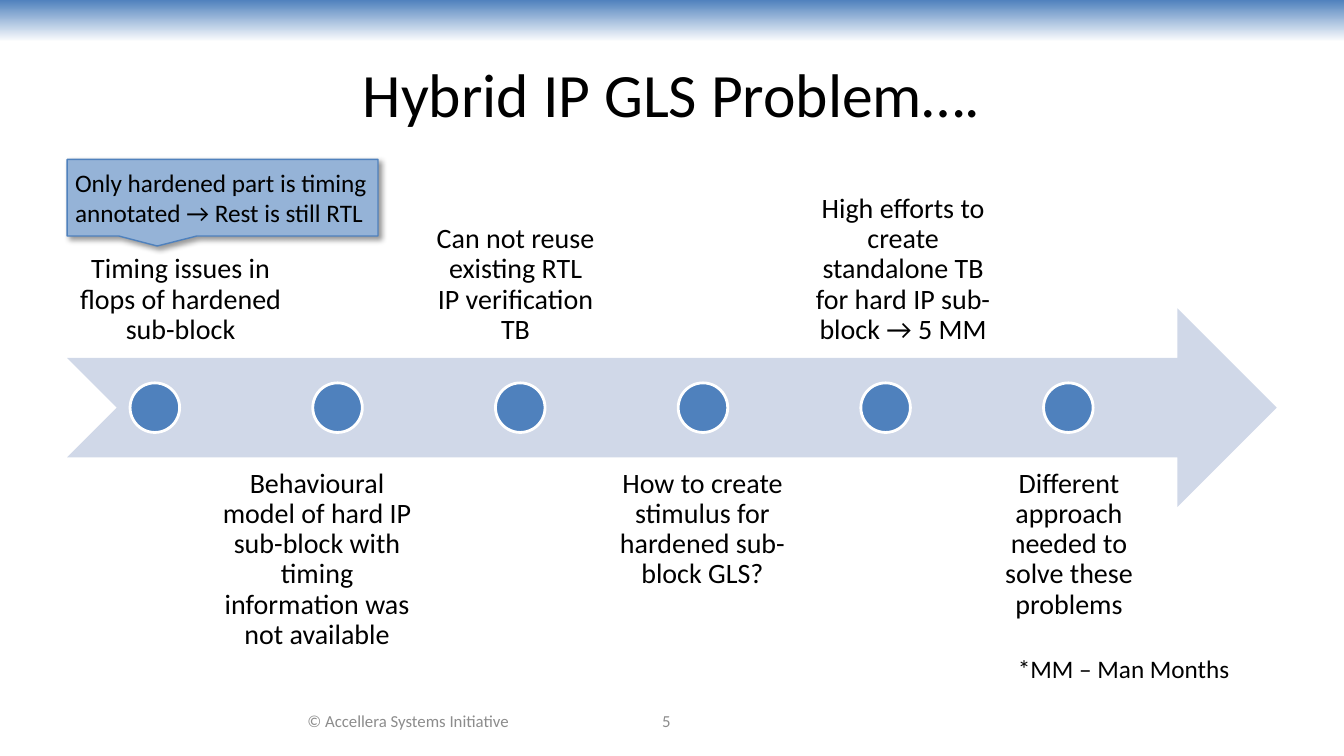
from dataclasses import dataclass

from lxml.etree import SubElement
from pptx import Presentation
from pptx.dml.color import RGBColor
from pptx.enum.shapes import MSO_SHAPE
from pptx.enum.text import MSO_ANCHOR, MSO_AUTO_SIZE, PP_ALIGN
from pptx.oxml.ns import qn
from pptx.shapes.autoshape import Shape
from pptx.slide import Slide
from pptx.util import Pt

COLORS = {
    "blue": "4F81BD",
    "white": "FFFFFF",
    "black": "000000",
    "arrow": "D0D8E8",
    "callout": "95B3D7",
    "footer": "8C8C8C",
}
FONT = "Calibri"

MARGIN = 48
ARROW_WIDTH = 864
BAND_HEIGHT = 141.8
ABOVE_TOP, ARROW_TOP, BELOW_TOP = 113.8, 220.3, 326.2
DOT_SIZE, DOT_LEFT, DOT_PITCH = 35.4, 92.9, 130.5


@dataclass
class Box:
    left: float
    top: float
    width: float
    height: float

    def lengths(self) -> tuple[Pt, Pt, Pt, Pt]:
        return Pt(self.left), Pt(self.top), Pt(self.width), Pt(self.height)


@dataclass
class Stage:
    text: str
    left: float
    width: float


# Stages alternate above and below the arrow
STAGES = [
    Stage("Timing issues in flops of hardened sub-block", 48, 162),
    Stage("Behavioural model of hard IP sub-block with timing "
          "information was not available", 149.8, 153.4),
    Stage("Can not reuse existing RTL IP verification TB", 303.1, 130.3),
    Stage("How to create stimulus for hardened sub-block GLS?", 433.4, 136.8),
    Stage("High efforts to create standalone TB for hard IP sub-block → 5 MM",
          570.2, 149.8),
    Stage("Different approach needed to solve these problems", 701.3, 124.6),
]


def rgb(name: str) -> RGBColor:
    return RGBColor.from_string(COLORS[name])


def write(shape: Shape, text: str, *, size: float, color: str = "black",
          align: PP_ALIGN = PP_ALIGN.CENTER, anchor: MSO_ANCHOR = MSO_ANCHOR.MIDDLE,
          inset: float | None = None, spacing: float | None = None,
          grow: bool = False) -> None:
    frame = shape.text_frame
    frame.word_wrap = True
    frame.auto_size = MSO_AUTO_SIZE.SHAPE_TO_FIT_TEXT if grow else MSO_AUTO_SIZE.NONE
    frame.vertical_anchor = anchor
    if inset is not None:
        frame.margin_left = frame.margin_right = Pt(inset)
        frame.margin_top = frame.margin_bottom = Pt(inset)
    paragraph = frame.paragraphs[0]
    paragraph.alignment = align
    if spacing is not None:
        paragraph.line_spacing = spacing
    run = paragraph.add_run()
    run.text = text
    run.font.name = FONT
    run.font.size = Pt(size)
    run.font.color.rgb = rgb(color)


def add_label(slide: Slide, box: Box, text: str, **style) -> None:
    write(slide.shapes.add_textbox(*box.lengths()), text, **style)


def add_figure(slide: Slide, kind: MSO_SHAPE, box: Box, fill: str,
               line: str | None = None, line_width: float = 1) -> Shape:
    figure = slide.shapes.add_shape(kind, *box.lengths())
    figure.shadow.inherit = False
    figure.fill.solid()
    figure.fill.fore_color.rgb = rgb(fill)
    if line:
        figure.line.color.rgb = rgb(line)
        figure.line.width = Pt(line_width)
    else:
        figure.line.fill.background()
    return figure


def add_banner(slide: Slide) -> None:
    banner = add_figure(slide, MSO_SHAPE.RECTANGLE, Box(0, 0, 960, 30), "blue")
    banner.fill.gradient()
    banner.fill.gradient_angle = 270
    for stop, color in zip(banner.fill.gradient_stops, ("blue", "white")):
        stop.color.rgb = rgb(color)


def cast_shadow(shape: Shape) -> None:
    effects = shape.element.spPr.find(qn("a:effectLst"))
    shadow = SubElement(effects, qn("a:outerShdw"), blurRad=str(Pt(4)),
                        dist=str(Pt(3)), dir=str(45 * 60000), rotWithShape="0")
    tint = SubElement(shadow, qn("a:srgbClr"), val=COLORS["black"])
    SubElement(tint, qn("a:alpha"), val="40000")


def add_stage(slide: Slide, index: int, stage: Stage) -> None:
    above = index % 2 == 0
    top = ABOVE_TOP if above else BELOW_TOP
    add_label(slide, Box(stage.left, top, stage.width, BAND_HEIGHT), stage.text,
              size=20, inset=8.8, spacing=0.9,
              anchor=MSO_ANCHOR.BOTTOM if above else MSO_ANCHOR.TOP)
    dot_top = ARROW_TOP + (BAND_HEIGHT - DOT_SIZE) / 2
    add_figure(slide, MSO_SHAPE.OVAL,
               Box(DOT_LEFT + index * DOT_PITCH, dot_top, DOT_SIZE, DOT_SIZE),
               "blue", line="white", line_width=2)


def main() -> None:
    deck = Presentation()
    deck.slide_width, deck.slide_height = Pt(960), Pt(540)
    slide = deck.slides.add_slide(deck.slide_layouts.get_by_name("Title Only"))

    # Banner and title
    add_banner(slide)
    title = slide.shapes.title
    title.left, title.top, title.width, title.height = Box(48, 21.6, 864, 90).lengths()
    write(title, "Hybrid IP GLS Problem….", size=44)

    # Footer and footnote
    add_label(slide, Box(175.7, 500.4, 231.8, 28.8), "© Accellera Systems Initiative",
              size=12, color="footer")
    add_label(slide, Box(383.8, 500.4, 184.3, 28.8), "5", size=12, color="footer")
    add_label(slide, Box(720, 463, 168, 28.8), "*MM – Man Months", size=18,
              align=PP_ALIGN.LEFT, anchor=MSO_ANCHOR.TOP, grow=True)

    # Timeline
    add_figure(slide, MSO_SHAPE.NOTCHED_RIGHT_ARROW,
               Box(MARGIN, ARROW_TOP, ARROW_WIDTH, BAND_HEIGHT), "arrow")
    for index, stage in enumerate(STAGES):
        add_stage(slide, index, stage)

    # Callout on the first stage
    callout = add_figure(slide, MSO_SHAPE.RECTANGULAR_CALLOUT,
                         Box(MARGIN, ABOVE_TOP, 222, 54.8), "callout", line="blue")
    callout.adjustments[0], callout.adjustments[1] = -0.21, 0.63
    cast_shadow(callout)
    write(callout, "Only hardened part is timing annotated → Rest is still RTL",
          size=18, align=PP_ALIGN.LEFT, inset=5.6, grow=True)

    deck.save("out.pptx")


if __name__ == "__main__":
    main()
